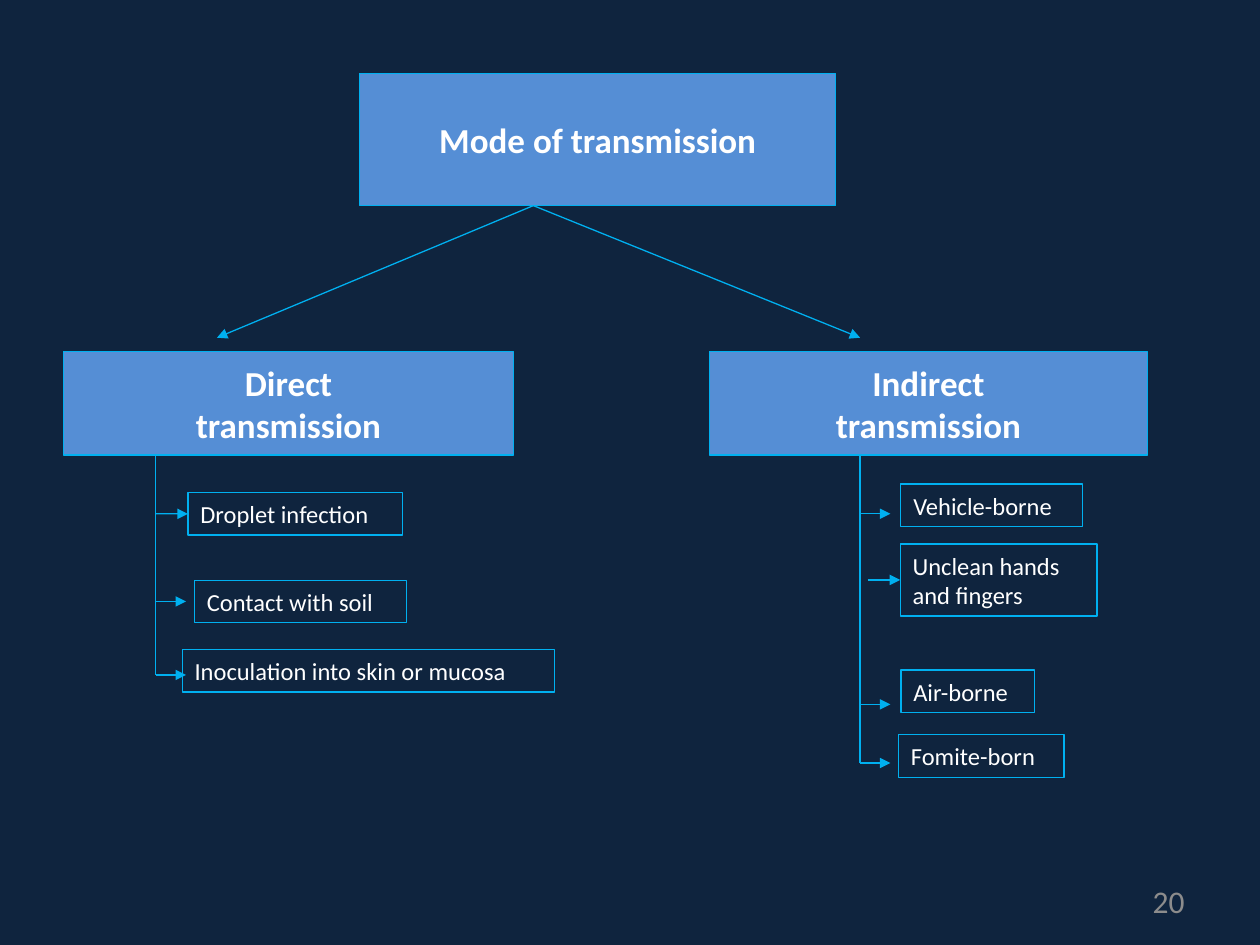
from dataclasses import dataclass

from lxml import etree
from pptx import Presentation
from pptx import util as u
from pptx.dml.color import RGBColor
from pptx.enum import shapes, text
from pptx.oxml import ns


@dataclass(frozen=True)
class Theme:
    background: str = "0F243E"
    heading_fill: str = "558ED5"
    line: str = "00B0F0"
    words: str = "FFFFFF"
    number: str = "8C8C8C"
    font: str = "Calibri"
    heading_size: int = 20
    leaf_size: int = 14
    number_size: int = 18
    line_width: float = 0.75


@dataclass(frozen=True)
class Leaf:
    label: str
    left: float
    top: float
    width: float
    arrow_y: float
    height: float = 24.3
    joined: bool = False
    stem_gap: float = 0


THEME = Theme()
ARROW_LENGTH = 17.3
HEADING_TOP, HEADING_HEIGHT = 201, 59
FORK = (304.8, 117.5)
FORK_END_Y = 193

DIRECT_LEAVES = [
    Leaf("Droplet infection", 107.4, 281.5, 122.6, 293.6, joined=True),
    Leaf("Contact with soil", 111.1, 331.6, 121.2, 343.7),
    Leaf("Inoculation into skin or mucosa", 104.1, 371.1, 212.9, 385.7),
]
INDIRECT_LEAVES = [
    Leaf("Vehicle-borne", 514.8, 276.6, 103.8, 293.6),
    Leaf("Air-borne", 514.8, 382.9, 76.4, 402.5),
    Leaf("Fomite-born", 513.4, 419.9, 94.6, 436),
    Leaf("Unclean hands\nand fingers", 514.4, 310.8, 112.6, 331.4,
         height=41.2, joined=True, stem_gap=4.3),
]


def color(value):
    return RGBColor.from_string(value)


def write(box, words, size, tint, align, bold=False):
    frame = box.text_frame
    frame.word_wrap = True
    frame.vertical_anchor = text.MSO_ANCHOR.MIDDLE
    for index, line in enumerate(words.split("\n")):
        para = frame.add_paragraph() if index else frame.paragraphs[0]
        para.alignment = align
        span = para.add_run()
        span.text = line
        span.font.name = THEME.font
        span.font.size = u.Pt(size)
        span.font.bold = bold
        span.font.color.rgb = color(tint)


def add_box(page, left, top, width, height):
    box = page.shapes.add_shape(
        shapes.MSO_SHAPE.RECTANGLE,
        u.Pt(left), u.Pt(top), u.Pt(width), u.Pt(height))
    box.shadow.inherit = False
    box.fill.background()
    box.line.color.rgb = color(THEME.line)
    box.line.width = u.Pt(THEME.line_width)
    return box


def add_heading(page, words, left, top, width, height):
    box = add_box(page, left, top, width, height)
    box.fill.solid()
    box.fill.fore_color.rgb = color(THEME.heading_fill)
    write(box, words, THEME.heading_size, THEME.words,
          text.PP_ALIGN.CENTER, bold=True)


def add_leaf(page, leaf):
    box = add_box(page, leaf.left, leaf.top, leaf.width, leaf.height)
    write(box, leaf.label, THEME.leaf_size, THEME.words, text.PP_ALIGN.LEFT)
    return box


def add_line(page, start, end, arrow=True):
    line = page.shapes.add_connector(
        shapes.MSO_CONNECTOR.STRAIGHT, *map(u.Pt, start + end))
    line.line.color.rgb = color(THEME.line)
    line.line.width = u.Pt(THEME.line_width)
    if arrow:
        etree.SubElement(line.line._get_or_add_ln(),
                         ns.qn("a:tailEnd"), type="triangle")
    etree.SubElement(line._element.spPr, ns.qn("a:effectLst"))
    return line


def add_branch(page, words, left, width, stem_x, leaves):
    add_heading(page, words, left, HEADING_TOP, width, HEADING_HEIGHT)
    stem_end = max(leaf.arrow_y for leaf in leaves)
    add_line(page, (stem_x, HEADING_TOP + HEADING_HEIGHT),
             (stem_x, stem_end), arrow=False)
    for leaf in leaves:
        start_x = stem_x + leaf.stem_gap
        arrow = add_line(page, (start_x, leaf.arrow_y),
                         (start_x + ARROW_LENGTH, leaf.arrow_y))
        box = add_leaf(page, leaf)
        if leaf.joined:
            arrow.end_connect(box, 1)


def add_page_number(page, number):
    box = page.shapes.add_textbox(
        u.Pt(516), u.Pt(500.5), u.Pt(168), u.Pt(28.75))
    write(box, number, THEME.number_size, THEME.number, text.PP_ALIGN.RIGHT)


def main():
    deck = Presentation()
    deck.slide_width, deck.slide_height = u.Pt(720), u.Pt(540)
    page = deck.slides.add_slide(deck.slide_layouts[6])
    page.background.fill.solid()
    page.background.fill.fore_color.rgb = color(THEME.background)

    add_heading(page, "Mode of transmission", 205.6, 41.9, 272, 75.6)
    for end_x in (124, 491.5):
        add_line(page, FORK, (end_x, FORK_END_Y))
    add_branch(page, "Direct\ntransmission", 36.4, 257, 89, DIRECT_LEAVES)
    add_branch(page, "Indirect\ntransmission", 405.4, 250.3, 491.5,
               INDIRECT_LEAVES)
    add_page_number(page, "20")
    deck.save("out.pptx")


if __name__ == "__main__":
    main()
